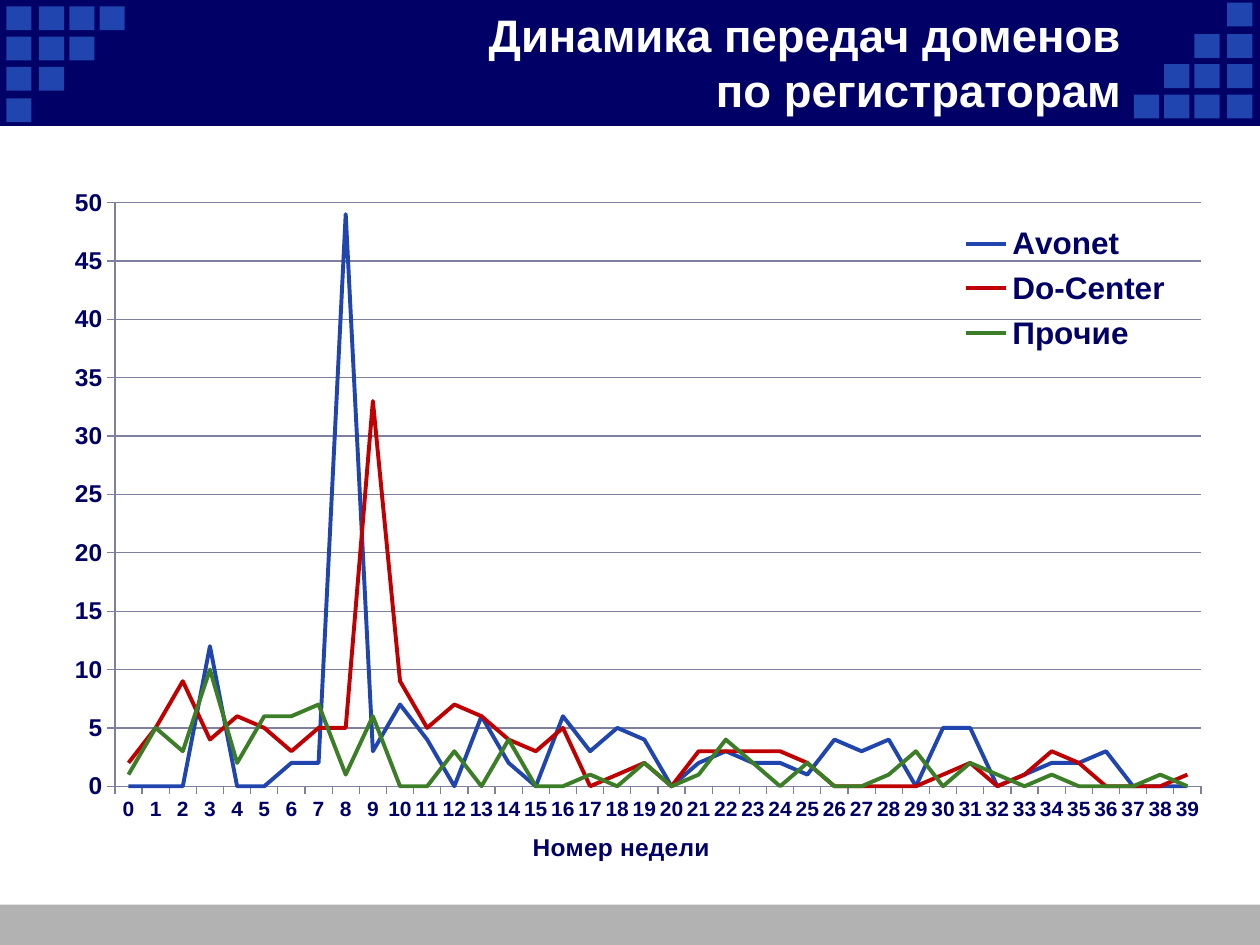
"""Builds the slide on weekly domain transfers by registrar."""
import pptx
import pptx.chart.data
import pptx.dml.color
import pptx.enum.chart
import pptx.enum.shapes
import pptx.enum.text
import pptx.oxml
import pptx.oxml.ns
import pptx.util

Inches = pptx.util.Inches
COLORS = {
    "navy": "000066", "blue": "2045AE", "red": "C00000", "green": "3C7E27",
    "gray": "B2B2B2", "grid": "7F7F9F", "white": "FFFFFF",
}
TRANSFERS = {
    "Avonet": ("blue", [0, 0, 0, 12, 0, 0, 2, 2, 49, 3, 7, 4, 0, 6, 2, 0, 6, 3, 5, 4,
                        0, 2, 3, 2, 2, 1, 4, 3, 4, 0, 5, 5, 0, 1, 2, 2, 3, 0, 0, 0]),
    "Do-Center": ("red", [2, 5, 9, 4, 6, 5, 3, 5, 5, 33, 9, 5, 7, 6, 4, 3, 5, 0, 1, 2,
                          0, 3, 3, 3, 3, 2, 0, 0, 0, 0, 1, 2, 0, 1, 3, 2, 0, 0, 0, 1]),
    "Прочие": ("green", [1, 5, 3, 10, 2, 6, 6, 7, 1, 6, 0, 0, 3, 0, 4, 0, 0, 1, 0, 2,
                         0, 1, 4, 2, 0, 2, 0, 0, 1, 3, 0, 2, 1, 0, 1, 0, 0, 0, 1, 0]),
}


def rgb(name):
    return pptx.dml.color.RGBColor.from_string(COLORS[name])


def style_font(font, size, color="navy"):
    font.name = "Arial"
    font.size = pptx.util.Pt(size)
    font.bold = True
    font.color.rgb = rgb(color)


def write_text(frame, text, size, color="navy", align=None):
    frame.text = text
    for paragraph in frame.paragraphs:
        paragraph.alignment = align
        for run in paragraph.runs:
            style_font(run.font, size, color)


def place(element, inner=False, **fractions):
    for old in element.findall(pptx.oxml.ns.qn("c:layout")):
        element.remove(old)
    entries = '<c:layoutTarget val="inner"/>' if inner else ""
    entries += '<c:xMode val="edge"/><c:yMode val="edge"/>'
    entries += "".join(f'<c:{key} val="{value}"/>' for key, value in fractions.items())
    layout = pptx.oxml.parse_xml(
        f'<c:layout {pptx.oxml.ns.nsdecls("c")}><c:manualLayout>{entries}'
        "</c:manualLayout></c:layout>")
    before = [child for child in element
              if child.tag in (pptx.oxml.ns.qn("c:tx"), pptx.oxml.ns.qn("c:legendPos"))]
    element.insert(len(before), layout)


class SlideBuilder:
    """Holds the style and the current slide."""

    def __init__(self, deck):
        self.slide = deck.slides.add_slide(deck.slide_layouts[5])

    def box(self, left, top, width, height, color):
        block = self.slide.shapes.add_shape(
            pptx.enum.shapes.MSO_SHAPE.RECTANGLE,
            Inches(left), Inches(top), Inches(width), Inches(height))
        block.shadow.inherit = False
        block.fill.solid()
        block.fill.fore_color.rgb = rgb(color)
        block.line.fill.background()

    def corner_squares(self):
        for row, top in enumerate((0.05, 0.29, 0.53, 0.78)):
            for left in (0.05, 0.31, 0.55, 0.79)[:4 - row]:
                self.box(left, top, 0.2, 0.19, "blue")
                self.box(9.79 - left, 0.8 - top, 0.2, 0.19, "blue")

    def title(self, text):
        heading = self.slide.shapes.title
        heading.left, heading.top = Inches(0.92), Inches(0.04)
        heading.width, heading.height = Inches(8.08), Inches(0.9)
        frame = heading.text_frame
        frame.margin_top = frame.margin_bottom = 0
        frame.auto_size = pptx.enum.text.MSO_AUTO_SIZE.NONE
        frame.vertical_anchor = pptx.enum.text.MSO_ANCHOR.MIDDLE
        write_text(frame, text, 26, "white", pptx.enum.text.PP_ALIGN.RIGHT)
        heading.element.getparent().append(heading.element)

    def axis(self, axis, size):
        axis.major_tick_mark = pptx.enum.chart.XL_TICK_MARK.OUTSIDE
        axis.format.line.color.rgb = rgb("grid")
        style_font(axis.tick_labels.font, size)

    def line_chart(self, transfers, axis_title):
        weekly = pptx.chart.data.CategoryChartData()
        weekly.categories = [str(week) for week in range(40)]
        for registrar, (_, counts) in transfers.items():
            weekly.add_series(registrar, counts)
        chart = self.slide.shapes.add_chart(
            pptx.enum.chart.XL_CHART_TYPE.LINE,
            Inches(0.35), Inches(1.39), Inches(9.37), Inches(5.51), weekly).chart
        chart.has_title = False
        style_font(chart.font, 18)
        plot = chart.plots[0]
        plot.vary_by_categories = False
        for series, (color, _) in zip(plot.series, transfers.values()):
            series.smooth = False
            series.marker.style = pptx.enum.chart.XL_MARKER_STYLE.NONE
            series.format.line.width = pptx.util.Pt(2.25)
            series.format.line.color.rgb = rgb(color)

        weeks, amounts = chart.category_axis, chart.value_axis
        self.axis(weeks, 12)
        self.axis(amounts, 14)
        amounts.minimum_scale, amounts.maximum_scale, amounts.major_unit = 0, 50, 5
        amounts.major_gridlines.format.line.color.rgb = rgb("grid")
        write_text(weeks.axis_title.text_frame, axis_title, 14)
        place(weeks.axis_title._element, x=0.41, y=0.95)

        chart.has_legend = True
        chart.legend.position = pptx.enum.chart.XL_LEGEND_POSITION.RIGHT
        chart.legend.include_in_layout = True
        style_font(chart.legend.font, 18)
        place(chart.legend._element, x=0.76, y=0.06, w=0.21, h=0.21)
        plot_area = chart.element.find(".//" + pptx.oxml.ns.qn("c:plotArea"))
        place(plot_area, inner=True, x=0.06, y=0.04, w=0.92, h=0.85)


def main():
    deck = pptx.Presentation()
    deck.slide_width, deck.slide_height = Inches(10), Inches(7.5)
    builder = SlideBuilder(deck)
    builder.box(0, 7.18, 10, 0.32, "gray")
    builder.box(0, 0, 10, 1, "navy")
    builder.corner_squares()
    builder.line_chart(TRANSFERS, "Номер недели")
    builder.title("Динамика передач доменов\vпо регистраторам")
    deck.save("out.pptx")


if __name__ == "__main__":
    main()
